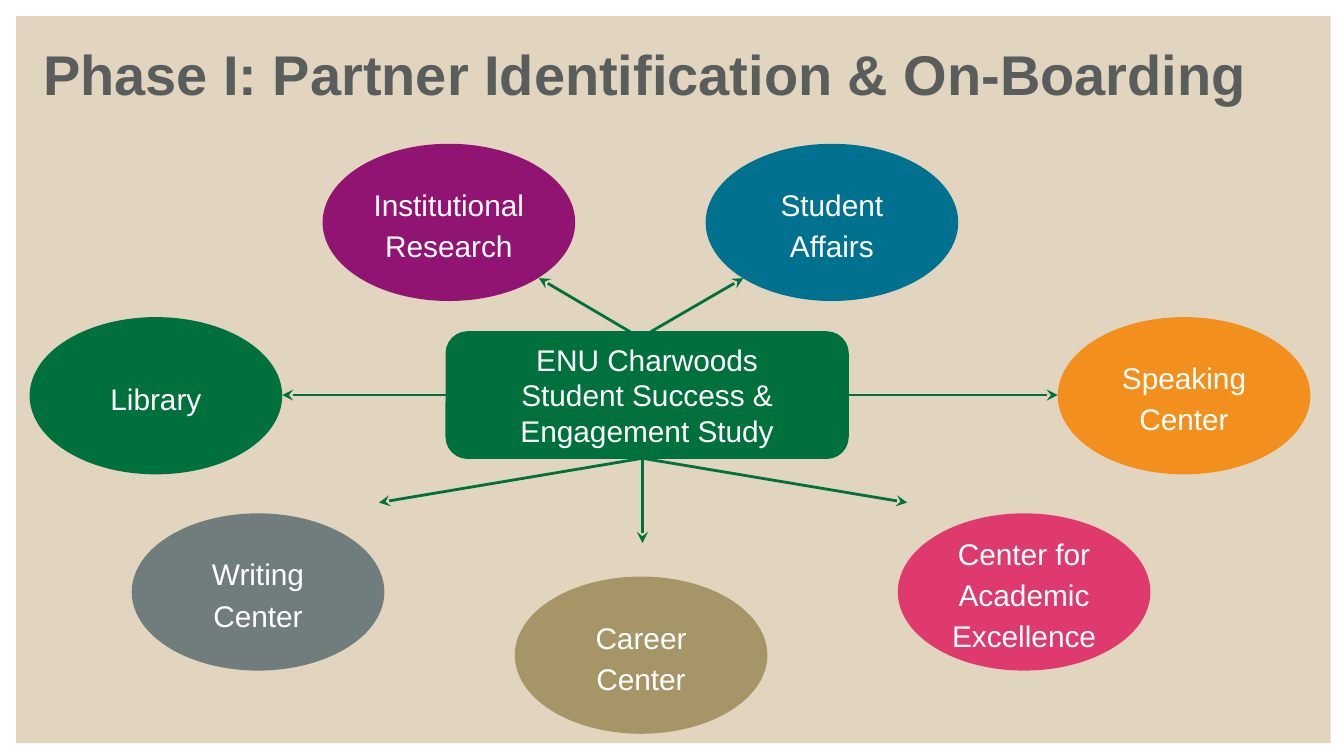
import pptx
import pptx.util
import pptx.dml.color
import pptx.enum.shapes
import pptx.enum.text
import pptx.oxml.ns
import lxml.etree

Inches = pptx.util.Inches
Shape = pptx.enum.shapes.MSO_SHAPE
Align = pptx.enum.text.PP_ALIGN

COLORS = {
    "sand": "E1D5BF",
    "green": "00703C",
    "purple": "911472",
    "blue": "00728F",
    "orange": "F3901D",
    "gray": "717C7D",
    "khaki": "A69667",
    "pink": "DE3A6E",
    "slate": "595E5D",
    "white": "FFFFFF",
}
PARTNER_SIZE = (1.88, 1.17)
PARTNERS = [
    ("Institutional Research", "purple", 2.4, 1.07),
    ("Student Affairs", "blue", 5.25, 1.07),
    ("Library", "green", 0.22, 2.36),
    ("Speaking Center", "orange", 7.87, 2.36),
    ("Writing Center", "gray", 0.98, 3.82),
    ("Career Center", "khaki", 3.83, 4.29),
    ("Center for Academic Excellence", "pink", 6.68, 3.82),
]
HUB = (3.32, 2.47, 2.99, 0.94)
HUB_LEFT, HUB_RIGHT = 1, 3
# Start, end and the hub side joined, if the arrow leaves from its middle
ARROWS = [
    ((4.84, 2.47), (5.53, 2.07), None),
    ((4.69, 2.47), (4.01, 2.07), None),
    ((4.78, 3.41), (4.78, 4.04), None),
    ((4.78, 3.41), (6.75, 3.74), None),
    ((4.78, 3.41), (2.82, 3.74), None),
    ((3.32, 2.94), (2.1, 2.94), HUB_LEFT),
    ((6.31, 2.94), (7.87, 2.94), HUB_RIGHT),
]


def rgb(name):
    return pptx.dml.color.RGBColor.from_string(COLORS[name])


def write(box, text, size=16, color="white", bold=False, align=Align.CENTER, spacing=1.0):
    """Fill a shape with text, one paragraph per line."""
    frame = box.text_frame
    frame.word_wrap = True
    frame.auto_size = pptx.enum.text.MSO_AUTO_SIZE.NONE
    frame.vertical_anchor = pptx.enum.text.MSO_ANCHOR.MIDDLE
    frame.margin_left = frame.margin_right = Inches(0.1)
    frame.margin_top = frame.margin_bottom = Inches(0.1)
    frame.text = text
    for para in frame.paragraphs:
        para.alignment = align
        para.line_spacing = spacing
        for span in para.runs:
            span.font.name = "Arial"
            span.font.size = pptx.util.Pt(size)
            span.font.bold = bold
            span.font.color.rgb = rgb(color)


class Diagram:
    line_color = "green"
    arrow_width = pptx.util.Pt(1.5)
    border_width = pptx.util.Pt(0.75)

    def __init__(self, page):
        self.page = page

    def title(self, text, left, top, width, height):
        box = self.page.shapes.title
        box.left, box.top = Inches(left), Inches(top)
        box.width, box.height = Inches(width), Inches(height)
        write(box, text, size=30, color="slate", bold=True, align=Align.LEFT)

    def block(self, kind, color, left, top, width, height, border=False):
        box = self.page.shapes.add_shape(
            kind, Inches(left), Inches(top), Inches(width), Inches(height))
        box.shadow.inherit = False
        box.fill.solid()
        box.fill.fore_color.rgb = rgb(color)
        if border:
            box.line.color.rgb = rgb(self.line_color)
            box.line.width = self.border_width
        else:
            box.line.fill.background()
        return box

    def panel(self, left, top, width, height):
        """Lay a plain rectangle behind the title."""
        box = self.block(Shape.RECTANGLE, "sand", left, top, width, height)
        self.page.shapes.title.element.addprevious(box.element)

    def partner(self, text, color, left, top):
        box = self.block(Shape.OVAL, color, left, top, *PARTNER_SIZE)
        write(box, text, spacing=1.15)

    def hub(self, text, left, top, width, height):
        box = self.block(Shape.ROUNDED_RECTANGLE, "green",
                         left, top, width, height, border=True)
        box.adjustments[0] = 0.17
        write(box, text)
        return box

    def arrow(self, start, end, hub, side):
        line = self.page.shapes.add_connector(
            pptx.enum.shapes.MSO_CONNECTOR.STRAIGHT,
            *(Inches(value) for value in start + end))
        if side is not None:
            line.begin_connect(hub, side)
        line.line.color.rgb = rgb(self.line_color)
        line.line.width = self.arrow_width
        qn = pptx.oxml.ns.qn
        properties = line.element.spPr
        lxml.etree.SubElement(properties.find(qn("a:ln")), qn("a:tailEnd"), type="stealth")
        lxml.etree.SubElement(properties, qn("a:effectLst"))


def main():
    deck = pptx.Presentation()
    deck.slide_width = Inches(10)
    deck.slide_height = deck.slide_width * 9 // 16
    diagram = Diagram(deck.slides.add_slide(deck.slide_layouts[5]))
    diagram.panel(0.12, 0.12, 9.78, 5.41)
    diagram.title("Phase I: Partner Identification & On-Boarding", 0.22, 0.23, 9.65, 0.63)
    for partner in PARTNERS:
        diagram.partner(*partner)
    hub = diagram.hub("ENU Charwoods\nStudent Success & Engagement Study", *HUB)
    for start, end, side in ARROWS:
        diagram.arrow(start, end, hub, side)
    deck.save("out.pptx")


if __name__ == "__main__":
    main()
